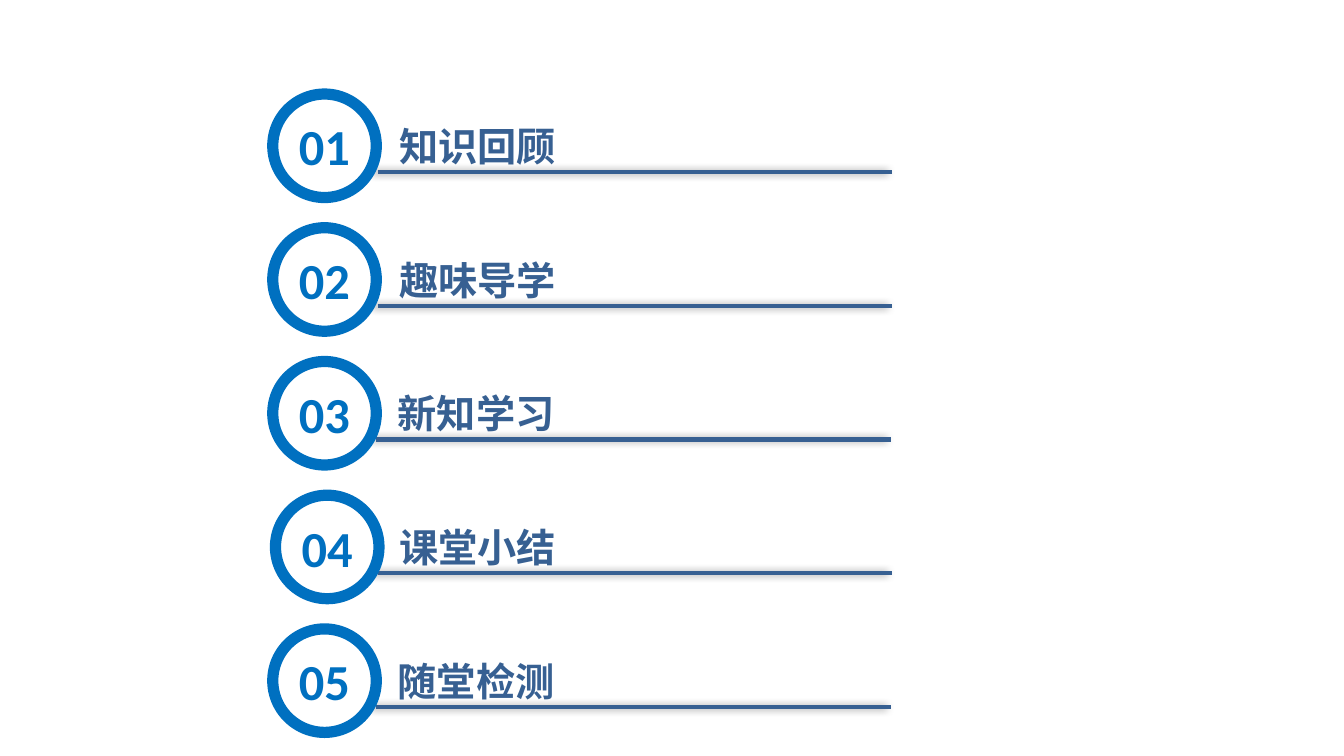
from dataclasses import dataclass

from lxml.etree import SubElement
from pptx import Presentation
from pptx.dml.color import RGBColor
from pptx.enum.shapes import MSO_CONNECTOR, MSO_SHAPE
from pptx.enum.text import MSO_ANCHOR, MSO_AUTO_SIZE, PP_ALIGN
from pptx.oxml.ns import qn
from pptx.util import Inches, Pt


@dataclass(frozen=True)
class Theme:
    """Colours, fonts and type sizes of the agenda."""
    ring: RGBColor = RGBColor(0x00, 0x70, 0xC0)
    topic: RGBColor = RGBColor(0x37, 0x60, 0x92)
    shadow: str = "000000"
    number_font: str = "Calibri"
    topic_font: str = "Noto Sans CJK SC"
    number_size: Pt = Pt(27)
    topic_size: Pt = Pt(21)
    ring_width: Pt = Pt(6)
    rule_width: Pt = Pt(2.25)


THEME = Theme()
AGENDA = [
    ("知识回顾", 2.03, 2.93),
    ("趣味导学", 2.03, 2.93),
    ("新知学习", 2.03, 2.92),
    ("课堂小结", 2.05, 2.93),
    ("随堂检测", 2.03, 2.92),
]
FIRST_TOP = 0.7
ROW_PITCH = 3.98 / (len(AGENDA) - 1)
RING_SIZE = 0.77
RULE_LENGTH = 3.83


def add_bold_run(paragraph, text, font_name, size, color):
    """Append one bold run with the same Latin and East Asian font."""
    run = paragraph.add_run()
    run.text = text
    run.font.size = size
    run.font.bold = True
    run.font.color.rgb = color
    run.font.name = font_name
    SubElement(run.font._element, qn("a:ea"), typeface=font_name)


def set_insets(frame, horizontal, vertical):
    """Set the inner margins of a text frame."""
    frame.margin_left = frame.margin_right = Inches(horizontal)
    frame.margin_top = frame.margin_bottom = Inches(vertical)


def add_number_ring(slide, number, left, top):
    """Draw a hollow ring around a two-digit number."""
    ring = slide.shapes.add_shape(
        MSO_SHAPE.OVAL, Inches(left), Inches(top), Inches(RING_SIZE), Inches(RING_SIZE))
    ring.shadow.inherit = False
    ring.fill.background()
    ring.line.color.rgb = THEME.ring
    ring.line.width = THEME.ring_width
    frame = ring.text_frame
    set_insets(frame, 0.07, 0.04)
    frame.vertical_anchor = MSO_ANCHOR.MIDDLE
    paragraph = frame.paragraphs[0]
    paragraph.alignment = PP_ALIGN.CENTER
    add_bold_run(paragraph, f"{number:02d}", THEME.number_font, THEME.number_size, THEME.ring)


def add_topic(slide, topic, left, top):
    """Place the topic name beside its ring."""
    label = slide.shapes.add_textbox(Inches(left), Inches(top), Inches(1.26), Inches(0.43))
    frame = label.text_frame
    set_insets(frame, 0.04, 0.04)
    frame.word_wrap = False
    frame.auto_size = MSO_AUTO_SIZE.SHAPE_TO_FIT_TEXT
    add_bold_run(frame.paragraphs[0], topic, THEME.topic_font, THEME.topic_size, THEME.topic)


def add_rule(slide, left, top):
    """Underline a topic with a softly shadowed rule."""
    rule = slide.shapes.add_connector(
        MSO_CONNECTOR.STRAIGHT, Inches(left), Inches(top),
        Inches(left + RULE_LENGTH), Inches(top))
    rule.line.color.rgb = THEME.topic
    rule.line.width = THEME.rule_width
    effects = SubElement(rule._element.spPr, qn("a:effectLst"))
    shadow = SubElement(effects, qn("a:outerShdw"), blurRad=str(Pt(4)), dist=str(Pt(3)),
                        dir=str(180 * 60000), algn="ctr", rotWithShape="0")
    color = SubElement(shadow, qn("a:srgbClr"), val=THEME.shadow)
    SubElement(color, qn("a:alpha"), val="40000")


def main():
    """Build the agenda slide."""
    deck = Presentation()
    deck.slide_width = Inches(10)
    deck.slide_height = deck.slide_width * 9 // 16
    slide = deck.slides.add_slide(deck.slide_layouts[6])
    for row, (topic, ring_left, topic_left) in enumerate(AGENDA):
        top = FIRST_TOP + row * ROW_PITCH
        add_topic(slide, topic, topic_left, top + 0.17)
        add_rule(slide, topic_left - 0.12, top + 0.58)
        add_number_ring(slide, row + 1, ring_left, top)
    deck.save("out.pptx")


if __name__ == "__main__":
    main()
